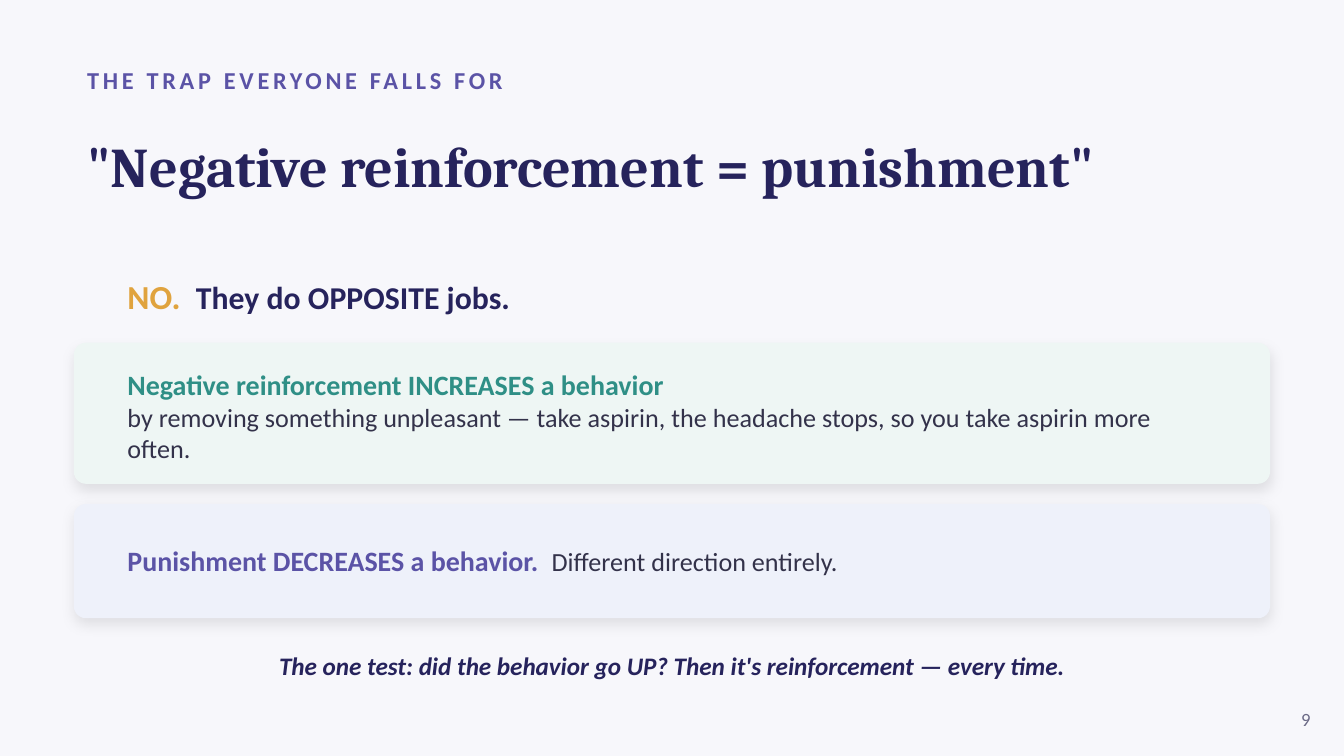
from lxml.etree import SubElement
from pptx import Presentation
from pptx.dml.color import RGBColor
from pptx.enum.shapes import MSO_SHAPE
from pptx.enum.text import MSO_ANCHOR, MSO_AUTO_SIZE, PP_ALIGN
from pptx.oxml.ns import qn
from pptx.util import Inches, Pt

BACKGROUND = RGBColor(0xF7, 0xF7, 0xFB)
NAVY = RGBColor(0x26, 0x23, 0x5C)
PURPLE = RGBColor(0x5B, 0x53, 0xA6)
AMBER = RGBColor(0xE0, 0xA3, 0x3E)
TEAL = RGBColor(0x2F, 0x8F, 0x86)
INK = RGBColor(0x33, 0x32, 0x4A)
GRAY = RGBColor(0x6B, 0x6A, 0x86)
MINT = RGBColor(0xEE, 0xF6, 0xF4)
LAVENDER = RGBColor(0xEE, 0xF1, 0xFA)

prs = Presentation()
prs.slide_width = Inches(10)
prs.slide_height = Inches(10 * 9 / 16)
s = prs.slides.add_slide(prs.slide_layouts[5])
s.background.fill.solid()
s.background.fill.fore_color.rgb = BACKGROUND


def write(sp, paragraphs, align=PP_ALIGN.LEFT, font="Calibri"):
    tf = sp.text_frame
    tf.word_wrap = True
    tf.auto_size = MSO_AUTO_SIZE.NONE
    tf.vertical_anchor = MSO_ANCHOR.MIDDLE
    for i, runs in enumerate(paragraphs):
        p = tf.add_paragraph() if i else tf.paragraphs[0]
        p.alignment = align
        for text, size, color, bold in runs:
            r = p.add_run()
            r.text = text
            r.font.name = font
            r.font.size = Pt(size)
            r.font.color.rgb = color
            r.font.bold = bold
    return tf


def add_text(left, top, width, height, paragraphs, align=PP_ALIGN.LEFT):
    sp = s.shapes.add_textbox(Inches(left), Inches(top), Inches(width), Inches(height))
    return write(sp, paragraphs, align)


title = s.shapes.title
title.left, title.top = Inches(0.55), Inches(0.78)
title.width, title.height = Inches(8.9), Inches(0.9)
write(title, [[('"Negative reinforcement = punishment"', 30, NAVY, True)]], font="Cambria")

tf = add_text(0.55, 0.42, 9, 0.35, [[("THE TRAP EVERYONE FALLS FOR", 13, PURPLE, True)]])
tf.paragraphs[0].runs[0].font._element.set("spc", "200")

add_text(0.85, 1.95, 8.4, 0.5, [[
    ("NO.  ", 18, AMBER, True),
    ("They do OPPOSITE jobs.", 17, NAVY, True),
]])

cards = [
    (2.55, 1.05, MINT, 0.75, [
        [("Negative reinforcement INCREASES a behavior", 15, TEAL, True)],
        [("by removing something unpleasant — take aspirin, the headache stops, "
          "so you take aspirin more often.", 14, INK, False)],
    ]),
    (3.75, 0.85, LAVENDER, 0.5, [[
        ("Punishment DECREASES a behavior.  ", 15, PURPLE, True),
        ("Different direction entirely.", 14, INK, False),
    ]]),
]
for top, height, fill, text_height, paragraphs in cards:
    card = s.shapes.add_shape(
        MSO_SHAPE.ROUNDED_RECTANGLE, Inches(0.55), Inches(top), Inches(8.9), Inches(height))
    card.adjustments[0] = 0.09 / height
    card.fill.solid()
    card.fill.fore_color.rgb = fill
    card.line.fill.background()
    card.shadow.inherit = False
    effects = card._element.spPr.find(qn("a:effectLst"))
    shadow = SubElement(effects, qn("a:outerShdw"), blurRad=str(Pt(7)), dist=str(Pt(3)),
                        dir="5400000", algn="bl", rotWithShape="0")
    shade = SubElement(shadow, qn("a:srgbClr"), val="000000")
    SubElement(shade, qn("a:alpha"), val="10000")
    add_text(0.85, top + 0.17, 8.3, text_height, paragraphs)

tf = add_text(0.55, 4.75, 8.9, 0.4, [[
    ("The one test: did the behavior go UP? Then it's reinforcement — every time.",
     13.5, NAVY, True),
]], PP_ALIGN.CENTER)
tf.paragraphs[0].runs[0].font.italic = True

add_text(9.35, 5.2, 0.5, 0.3, [[("9", 10, GRAY, False)]], PP_ALIGN.RIGHT)

prs.save("out.pptx")
